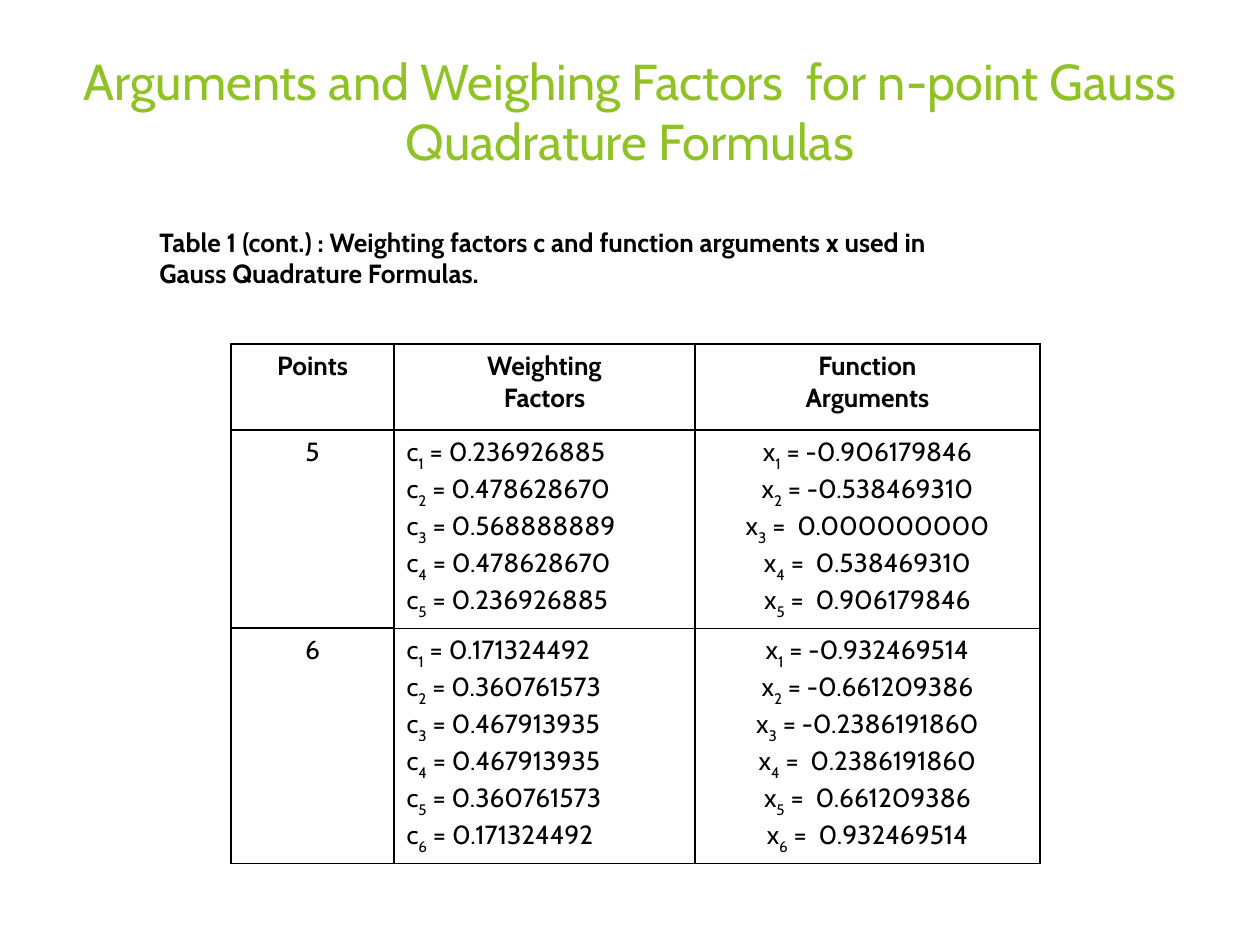
import pptx
import pptx.util
import pptx.dml.color
import pptx.enum.text
import pptx.oxml
import pptx.oxml.ns

GREEN = pptx.dml.color.RGBColor(0x90, 0xC2, 0x26)
BLACK = pptx.dml.color.RGBColor(0, 0, 0)
FONT = "Cabin"
CENTER = pptx.enum.text.PP_ALIGN.CENTER
LEFT = pptx.enum.text.PP_ALIGN.LEFT

HEADS = ["Points", "Weighting\nFactors", "Function\nArguments"]
RULES = {
    "5": (
        ["0.236926885", "0.478628670", "0.568888889", "0.478628670",
         "0.236926885"],
        ["-0.906179846", "-0.538469310", " 0.000000000", " 0.538469310",
         " 0.906179846"],
    ),
    "6": (
        ["0.171324492", "0.360761573", "0.467913935", "0.467913935",
         "0.360761573", "0.171324492"],
        ["-0.932469514", "-0.661209386", "-0.2386191860", " 0.2386191860",
         " 0.661209386", " 0.932469514"],
    ),
}


def px(n):
    return pptx.util.Emu(round(n * 914400 / 126))


def style(run, size, color=BLACK, bold=False):
    run.font.name = FONT
    run.font.size = pptx.util.Pt(size)
    run.font.color.rgb = color
    run.font.bold = bold


def add_text(slide, box, text, size, color, bold, align):
    frame = slide.shapes.add_textbox(*map(px, box)).text_frame
    frame.word_wrap = True
    frame.text = text
    para = frame.paragraphs[0]
    para.alignment = align
    for run in para.runs:
        style(run, size, color, bold)
    return frame


def add_title(slide, box):
    frame = add_text(slide, box, "Arguments and Weighing Factors  for n-point "
                     "Gauss Quadrature Formulas", 28.8, GREEN, False, CENTER)
    frame.margin_top = px(8)


def add_caption(slide, box):
    add_text(slide, box, "Table 1 (cont.) : Weighting factors c and function "
             "arguments x used in\vGauss Quadrature Formulas.",
             15, BLACK, True, LEFT)


def set_border(cell, top, base):
    """Draw the four edges in black, with widths in points."""
    props = cell._tc.get_or_add_tcPr()
    sides = [("lnL", 1), ("lnR", 1), ("lnT", top), ("lnB", base)]
    for spot, (side, width) in enumerate(sides):
        line = pptx.oxml.parse_xml(
            f'<a:{side} {pptx.oxml.ns.nsdecls("a")} w="{int(width * 12700)}">'
            f'<a:solidFill><a:srgbClr val="{BLACK}"/></a:solidFill>'
            f'</a:{side}>')
        props.insert(spot, line)


def fill_plain(cell, text, bold):
    cell.text_frame.text = text
    for para in cell.text_frame.paragraphs:
        para.alignment = CENTER
        for run in para.runs:
            style(run, 15, bold=bold)


def fill_terms(cell, name, values, align):
    """Write one line per value, each with a numbered subscript."""
    frame = cell.text_frame
    for num, value in enumerate(values, 1):
        para = frame.paragraphs[0] if num == 1 else frame.add_paragraph()
        para.alignment = align
        for part in (name, str(num), f" = {value}"):
            run = para.add_run()
            run.text = part
            style(run, 15)
        para.runs[1].font._element.set("baseline", "-30000")


def add_grid(slide, box, cols, rows):
    frame = slide.shapes.add_table(len(rows), len(cols), *map(px, box))
    table = frame.table
    table.first_row = table.horz_banding = False
    for col, width in zip(table.columns, cols):
        col.width = px(width)
    for row, height in zip(table.rows, rows):
        row.height = px(height)
    for col, head in enumerate(HEADS):
        fill_plain(table.cell(0, col), head, True)
    for row, (count, (factors, points)) in enumerate(RULES.items(), 1):
        fill_plain(table.cell(row, 0), count, False)
        fill_terms(table.cell(row, 1), "c", factors, LEFT)
        fill_terms(table.cell(row, 2), "x", points, CENTER)
    last = len(rows) - 1
    for row in range(len(rows)):
        for col in range(len(cols)):
            cell = table.cell(row, col)
            cell.fill.background()
            inner = 1 if col == 0 else 0.75
            set_border(cell, 1 if row == 0 else inner,
                       1 if row == last else inner)


def main():
    deck = pptx.Presentation()
    deck.slide_width, deck.slide_height = px(1260), px(945)
    slide = deck.slides.add_slide(deck.slide_layouts[6])
    add_title(slide, (21, 42, 1218, 123))
    cols, rows = [163, 301, 345], [86, 192, 227]
    add_grid(slide, (231, 344, sum(cols), sum(rows)), cols, rows)
    add_caption(slide, (147, 220, 1018, 123))
    deck.save("out.pptx")


if __name__ == "__main__":
    main()
